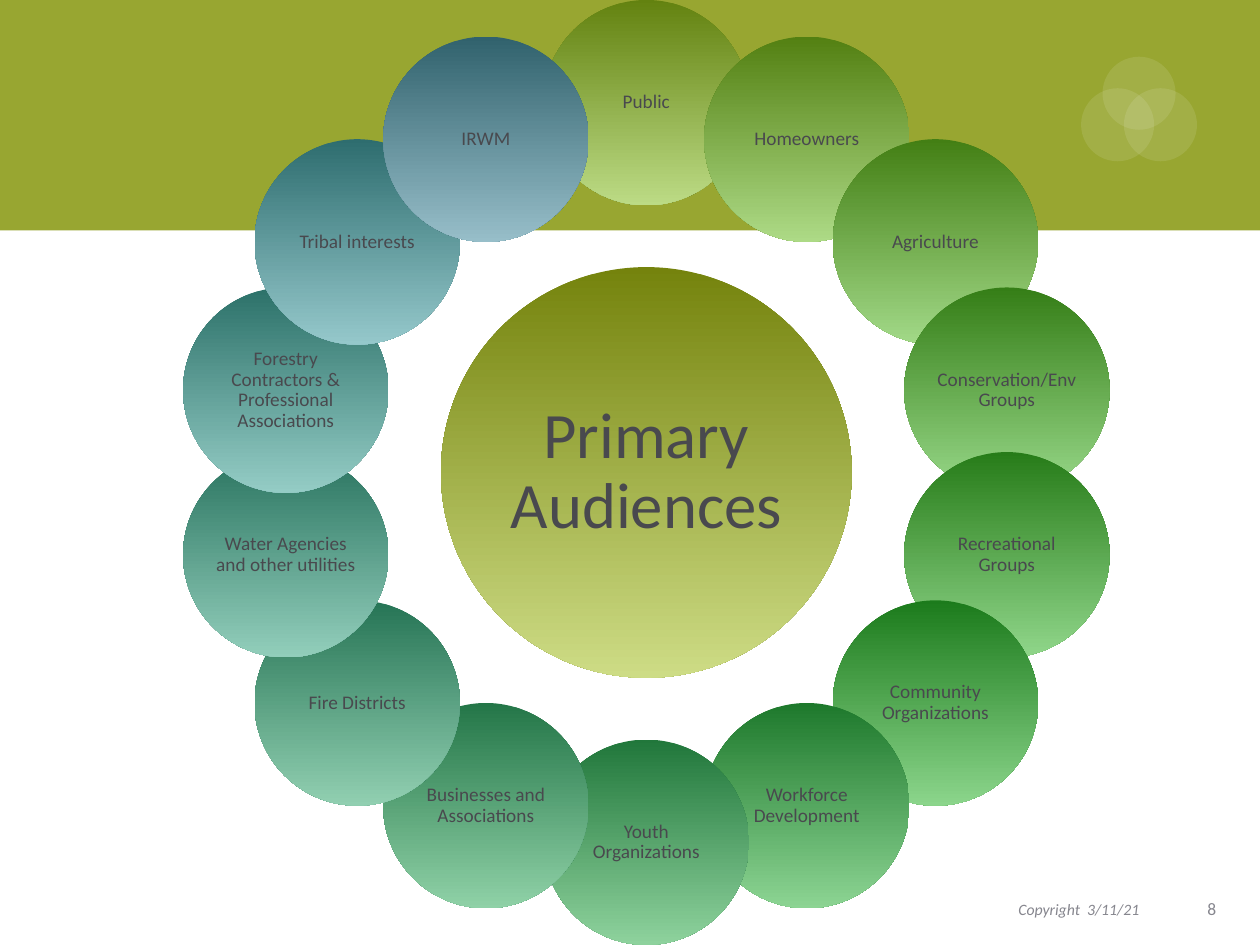
from dataclasses import dataclass
from math import cos, pi, sin

from lxml.etree import SubElement
from pptx import Presentation
from pptx.dml.color import RGBColor
from pptx.enum.shapes import MSO_SHAPE
from pptx.enum.text import MSO_ANCHOR, PP_ALIGN
from pptx.oxml.ns import qn
from pptx.util import Inches, Pt

WIDE, HIGH = 10, 7.5


@dataclass(frozen=True)
class Theme:
    font: str = "Calibri"
    band: str = "98A631"
    ink: str = "49494E"
    gray: str = "86868E"
    glow: str = "FFFFFF"
    hub: tuple = ("75830D", "CDDC85")
    title: int = 37
    label: int = 11
    note: int = 9
    page: int = 10


THEME = Theme()

# Label, top colour, bottom colour: clockwise from the top
RING = [
    ("Public", "638210", "BCDB85"),
    ("Homeowners", "538012", "ADDA86"),
    ("Agriculture", "437F14", "A2D988"),
    ("Conservation/Env Groups", "357E17", "98D889"),
    ("Recreational Groups", "277C19", "90D68A"),
    ("Community Organizations", "1C7B1C", "8BD58B"),
    ("Workforce Development", "1E792C", "8CD493"),
    ("Youth Organizations", "21773B", "8ED29D"),
    ("Businesses and Associations", "247648", "8FD1A7"),
    ("Fire Districts", "267455", "91CFB1"),
    ("Water Agencies and other utilities", "29735F", "92CEBB"),
    ("Forestry Contractors & Professional Associations", "2C7169", "94CCC5"),
    ("Tribal interests", "2E6D6F", "95C8CB"),
    ("IRWM", "31626D", "97BEC9"),
]


def color(code):
    return RGBColor.from_string(code)


def style(font, size, code):
    font.name = THEME.font
    font.size = Pt(size)
    font.color.rgb = color(code)


def plain(slide, kind, box):
    shape = slide.shapes.add_shape(kind, *map(Inches, box))
    shape.shadow.inherit = False
    shape.line.fill.background()
    return shape


def solid(slide, kind, box, code, alpha=None):
    shape = plain(slide, kind, box)
    shape.fill.solid()
    shape.fill.fore_color.rgb = color(code)
    if alpha is not None:
        tint = shape.fill._xPr.find(f".//{qn('a:srgbClr')}")
        SubElement(tint, qn("a:alpha"), val=str(alpha * 1000))


def disc(slide, x, y, size, text, shades, points, inset):
    """Shaded circle centred on x, y with its label inside."""
    box = (x - size / 2, y - size / 2, size, size)
    shape = plain(slide, MSO_SHAPE.OVAL, box)
    shape.fill.gradient()
    shape.fill.gradient_angle = 270
    for stop, code in zip(shape.fill.gradient_stops, shades):
        stop.color.rgb = color(code)
    frame = shape.text_frame
    frame.word_wrap = True
    frame.vertical_anchor = MSO_ANCHOR.MIDDLE
    frame.margin_left = frame.margin_right = Inches(inset)
    frame.margin_top = frame.margin_bottom = Inches(inset)
    para = frame.paragraphs[0]
    para.text = text
    para.alignment = PP_ALIGN.CENTER
    para.line_spacing = 0.9
    style(para.font, points, THEME.ink)


def wheel(slide):
    x, y, size = 5.13, HIGH / 2, 1.63
    reach = (HIGH - size) / 2
    disc(slide, x, y, 2 * size, "Primary Audiences", THEME.hub,
         THEME.title, 0.05)
    for i, (text, *shades) in enumerate(RING):
        turn = 2 * pi * i / len(RING)
        disc(slide, x + reach * sin(turn), y - reach * cos(turn), size,
             text, shades, THEME.label, 0.01)


def badge(slide):
    size, left, top = 0.58, 8.58, 0.45
    for col, row in ((0, 1), (2, 1), (1, 0)):
        box = (left + col * 0.17, top + row * 0.25, size, size)
        solid(slide, MSO_SHAPE.OVAL, box, THEME.glow, alpha=10)


def footer(slide):
    box = slide.shapes.add_textbox(*map(Inches, (5.67, 7.08, 4.08, 0.4)))
    frame = box.text_frame
    frame.word_wrap = True
    frame.vertical_anchor = MSO_ANCHOR.MIDDLE
    frame.margin_bottom = Inches(0.18)
    para = frame.paragraphs[0]
    para.alignment = PP_ALIGN.RIGHT
    tabs = SubElement(para._p.get_or_add_pPr(), qn("a:tabLst"))
    SubElement(tabs, qn("a:tab"), pos=str(Inches(1.5)), algn="l")
    for text, size, slant in (("Copyright  3/11/21", THEME.note, True),
                              ("\t8", THEME.page, False)):
        run = para.add_run()
        run.text = text
        style(run.font, size, THEME.gray)
        run.font.italic = slant


def main():
    deck = Presentation()
    deck.slide_width, deck.slide_height = Inches(WIDE), Inches(HIGH)
    slide = deck.slides.add_slide(deck.slide_layouts[6])

    # Backdrop
    solid(slide, MSO_SHAPE.RECTANGLE, (0, 0, WIDE, 1.83), THEME.band)
    footer(slide)
    badge(slide)

    # Audience circles
    wheel(slide)
    deck.save("out.pptx")


if __name__ == "__main__":
    main()
